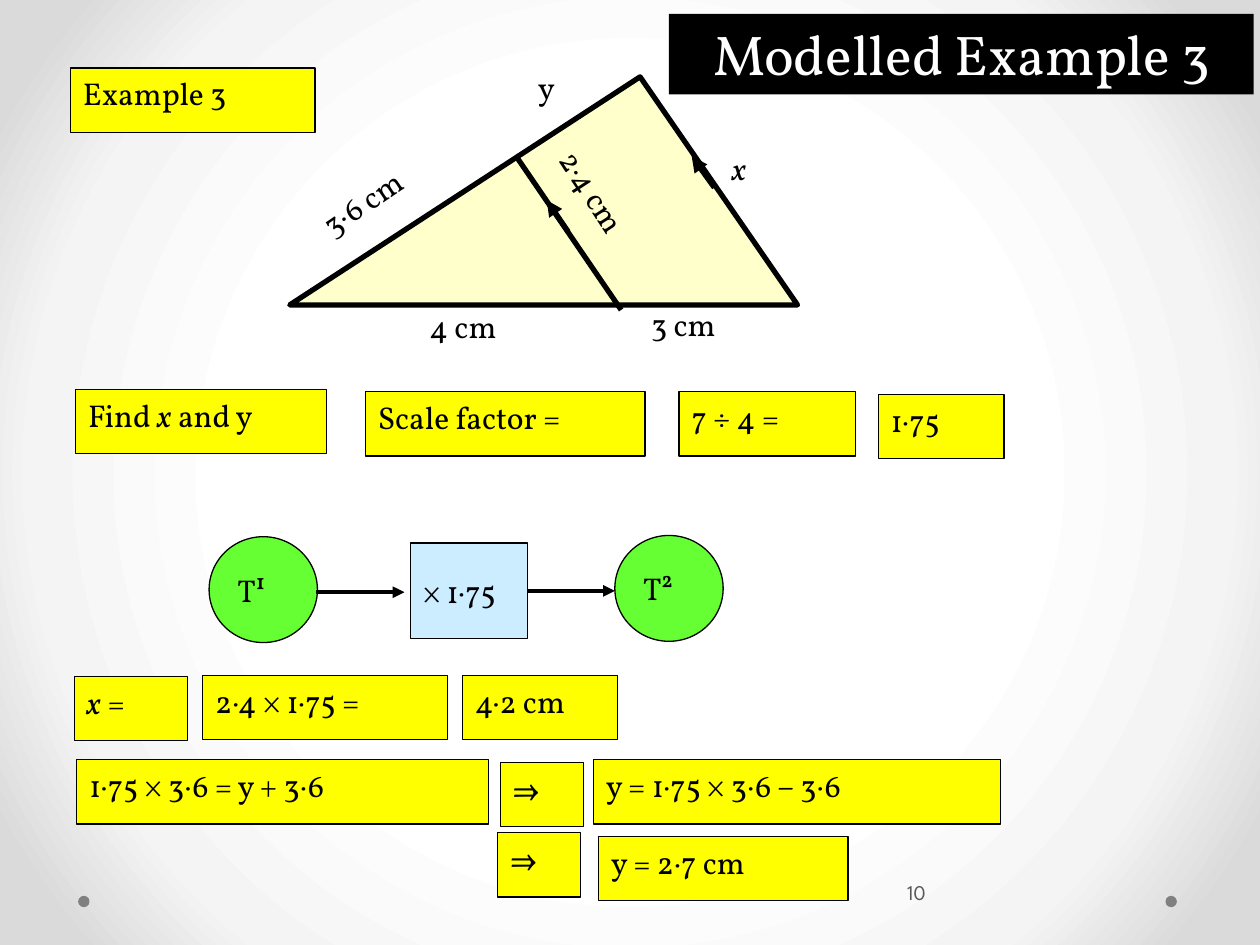
from lxml import etree
from pptx import Presentation
from pptx import util as u
from pptx.dml.color import RGBColor
from pptx.enum import shapes, text
from pptx.oxml import parse_xml
from pptx.oxml.ns import nsdecls, qn

BLACK, YELLOW, GREEN, BLUE, CREAM = "000000", "FFFF00", "66FF33", "CCECFF", "FFFFCC"
BOX_HEIGHT = 0.51
LABEL_HEIGHT = 0.5


def colour(value):
    return RGBColor.from_string(value)


class Board:
    font = "Vollkorn"
    size = 18

    def __init__(self, slide):
        self.slide = slide

    def background(self, stops):
        gradient = "".join(
            f'<a:gs pos="{position * 1000}"><a:srgbClr val="{value}"/></a:gs>'
            for position, value in stops
        )
        backdrop = parse_xml(
            f'<p:bg {nsdecls("p", "a")}><p:bgPr><a:gradFill rotWithShape="1">'
            f'<a:gsLst>{gradient}</a:gsLst><a:path path="circle">'
            '<a:fillToRect l="50000" t="50000" r="50000" b="50000"/></a:path>'
            '</a:gradFill><a:effectLst/></p:bgPr></p:bg>'
        )
        self.slide.element.cSld.insert(0, backdrop)

    def wording(self, holder, runs, size=None, font=None, ink=BLACK, middle=False, wrap=True):
        frame = holder.text_frame
        frame.word_wrap = wrap
        frame.vertical_anchor = text.MSO_ANCHOR.MIDDLE if middle else text.MSO_ANCHOR.TOP
        paragraph = frame.paragraphs[0]
        paragraph.alignment = text.PP_ALIGN.LEFT
        for words in runs:
            run = paragraph.add_run()
            run.text = words
            run.font.name = font or self.font
            run.font.size = u.Pt(size or self.size)
            run.font.italic = words == "x"
            run.font.color.rgb = colour(ink)
        return frame

    def shape(self, kind, left, top, width, height, fill, border=0.75):
        shape = self.slide.shapes.add_shape(
            kind, u.Inches(left), u.Inches(top), u.Inches(width), u.Inches(height))
        shape.shadow.inherit = False
        shape.fill.solid()
        shape.fill.fore_color.rgb = colour(fill)
        if border:
            shape.line.color.rgb = colour(BLACK)
            shape.line.width = u.Pt(border)
        else:
            shape.line.fill.background()
        return shape

    def box(self, left, top, width, *runs):
        box = self.shape(shapes.MSO_SHAPE.RECTANGLE, left, top, width, BOX_HEIGHT, YELLOW)
        self.wording(box, runs)

    def stage(self, kind, left, top, width, height, fill, words):
        stage = self.shape(kind, left, top, width, height, fill)
        self.wording(stage, [words], middle=True, wrap=False)
        return stage

    def label(self, left, top, width, words, rotation=0, **style):
        label = self.slide.shapes.add_textbox(
            u.Inches(left), u.Inches(top), u.Inches(width), u.Inches(LABEL_HEIGHT))
        label.rotation = rotation
        return self.wording(label, [words], **style)

    def line(self, start, end, weight, arrow=True):
        line = self.slide.shapes.add_connector(
            shapes.MSO_CONNECTOR.STRAIGHT, *(u.Inches(value) for value in (*start, *end)))
        line.line.color.rgb = colour(BLACK)
        line.line.width = u.Pt(weight)
        properties = line._element.spPr
        if arrow:
            etree.SubElement(properties.find(qn("a:ln")), qn("a:tailEnd"), type="triangle")
        etree.SubElement(properties, qn("a:effectLst"))
        return line


def main():
    deck = Presentation()
    deck.slide_width, deck.slide_height = u.Inches(10), u.Inches(7.5)
    board = Board(deck.slides.add_slide(deck.slide_layouts[6]))
    board.background([(50, "FFFFFF"), (76, "F4F4F4"), (92, "DADADA")])

    oval, rectangle = shapes.MSO_SHAPE.OVAL, shapes.MSO_SHAPE.RECTANGLE
    for left in (9.25, 0.62):
        board.shape(oval, left, 7.11, 0.09, 0.09, "808080", border=0)
    page = board.label(7.17, 6.83, 2.08, "10", size=12, font="League Spartan",
                       ink="595959", middle=True)
    page.margin_left, page.margin_right = u.Inches(0.03), u.Inches(0.05)

    board.box(0.56, 0.54, 1.94, "Example 3")

    triangle = board.shape(shapes.MSO_SHAPE.ISOSCELES_TRIANGLE, 2.3, 0.61, 4.03, 1.81, CREAM, 3)
    triangle.adjustments[0] = 0.69
    board.line((4.11, 1.26), (4.93, 2.46), 3, arrow=False)
    board.line((4.51, 1.84), (4.34, 1.59), 3)
    board.line((5.67, 1.49), (5.49, 1.24), 3)
    for left, top, width, words, rotation in (
        (3.31, 2.39, 1, "4 cm", 0),
        (5.07, 2.37, 1.2, "3 cm", 0),
        (4.06, 1.57, 1.56, "2·4 cm", 57),
        (5.71, 1.13, 0.36, "x", 0),
        (2.43, 1.33, 1.14, "3·6 cm", 325.8),
        (4.17, 0.49, 0.41, "y", 0),
    ):
        board.label(left, top, width, words, rotation)

    board.box(0.6, 3.09, 1.99, "Find ", "x", " and y")
    board.box(2.9, 3.11, 2.22, "Scale factor =")
    board.box(5.39, 3.11, 1.4, "7 ÷ 4 =")
    board.box(6.97, 3.13, 1, "1·75")

    board.stage(oval, 1.66, 4.26, 0.86, 0.84, GREEN, "T¹")
    board.line((2.51, 4.7), (3.21, 4.7), 2.25)
    multiplier = board.stage(rectangle, 3.26, 4.31, 0.93, 0.76, BLUE, "× 1·75")
    board.stage(oval, 4.88, 4.25, 0.86, 0.84, GREEN, "T²")
    result = board.line((4.19, 4.69), (4.88, 4.69), 2.25)
    result.begin_connect(multiplier, 3)

    board.box(0.59, 5.37, 0.9, "x", " =")
    board.box(1.61, 5.36, 1.94, "2·4 × 1·75 =")
    board.box(3.67, 5.36, 1.23, "4·2 cm")
    board.box(0.61, 6.03, 3.27, "1·75 × 3·6 = y + 3·6")
    board.box(3.97, 6.05, 0.66, "⇒")
    board.box(4.71, 6.03, 3.23, "y = 1·75 × 3·6 – 3·6")
    board.box(3.95, 6.61, 0.66, "⇒")
    board.box(4.75, 6.64, 1.98, "y = 2·7 cm")

    title = board.shape(rectangle, 5.31, 0.11, 4.64, 0.64, BLACK, border=0)
    heading = board.wording(title, ["Modelled Example 3"], size=32, ink="FFFFFF")
    heading.margin_left = u.Inches(0.35)

    deck.save("out.pptx")


if __name__ == "__main__":
    main()
